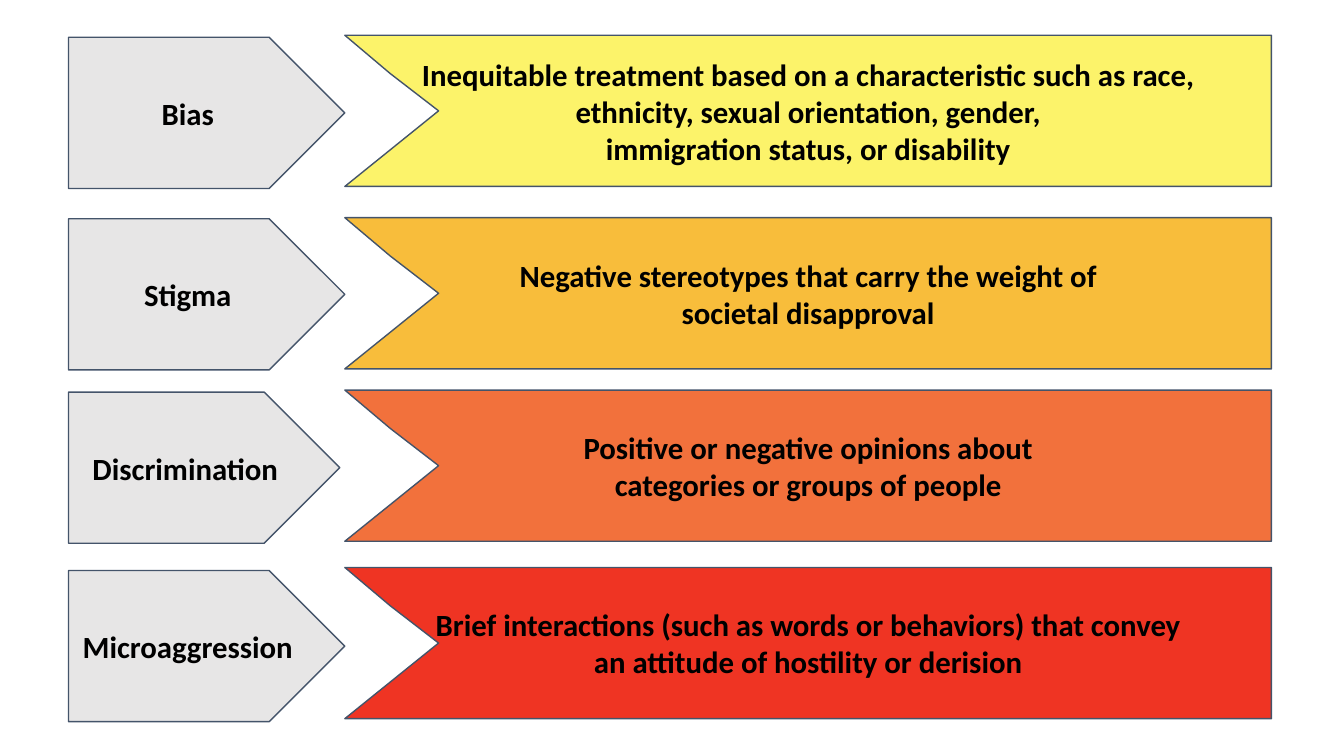
from pptx import Presentation
from pptx.dml.color import RGBColor
from pptx.enum.shapes import MSO_SHAPE
from pptx.enum.text import MSO_ANCHOR, PP_ALIGN
from pptx.util import Inches, Pt

COLORS = {
    "text": "000000",
    "outline": "44546A",
    "label": "E7E6E6",
    "yellow": "FCF36A",
    "amber": "F8BD3B",
    "orange": "F2713C",
    "red": "EF3423",
}
ROW_LEFT, ROW_HEIGHT = 0.68, 1.5
BANNER_OFFSET, BANNER_WIDTH = 2.74, 9.19
BANNER_OUTLINE = [(BANNER_WIDTH, 0), (BANNER_WIDTH, ROW_HEIGHT),
                  (0, ROW_HEIGHT), (0.93, 0.75), (0.45, 0.38)]
ROWS = [
    ("Bias", 0.37, 2.74, 0.35, "yellow",
     ["Inequitable treatment based on a characteristic such as race,",
      "ethnicity, sexual orientation, gender,",
      "immigration status, or disability"]),
    ("Stigma", 2.17, 2.74, 2.16, "amber",
     ["Negative stereotypes that carry the weight of",
      "societal disapproval"]),
    ("Discrimination", 3.89, 2.69, 3.87, "orange",
     ["Positive or negative opinions about",
      "categories or groups of people"]),
    ("Microaggression", 5.66, 2.74, 5.63, "red",
     ["Brief interactions (such as words or behaviors) that convey",
      "an attitude of hostility or derision"]),
]


def rgb(name):
    return RGBColor.from_string(COLORS[name])


def style_shape(sp, color, lines):
    sp.shadow.inherit = False
    sp.fill.solid()
    sp.fill.fore_color.rgb = rgb(color)
    sp.line.color.rgb = rgb("outline")
    sp.line.width = Pt(1)
    tf = sp.text_frame
    tf.word_wrap = True
    tf.vertical_anchor = MSO_ANCHOR.MIDDLE
    tf.text = "\n".join(lines)
    for p in tf.paragraphs:
        p.alignment = PP_ALIGN.CENTER
        p.font.name = "Calibri"
        p.font.size = Pt(22)
        p.font.bold = True
        p.font.color.rgb = rgb("text")


def add_label(s, left, top, width, term):
    sp = s.shapes.add_shape(MSO_SHAPE.PENTAGON, Inches(left), Inches(top),
                            Inches(width), Inches(ROW_HEIGHT))
    style_shape(sp, "label", [term])


def add_banner(s, left, top, color, lines):
    builder = s.shapes.build_freeform(Inches(left), Inches(top))
    builder.add_line_segments([(Inches(left + x), Inches(top + y))
                               for x, y in BANNER_OUTLINE])
    style_shape(builder.convert_to_shape(), color, lines)


def main():
    prs = Presentation()
    prs.slide_width = Inches(13.33)
    prs.slide_height = Inches(7.5)
    s = prs.slides.add_slide(prs.slide_layouts[6])
    for term, label_top, label_width, banner_top, color, lines in ROWS:
        add_label(s, ROW_LEFT, label_top, label_width, term)
        add_banner(s, ROW_LEFT + BANNER_OFFSET, banner_top, color, lines)
    prs.save("out.pptx")


if __name__ == "__main__":
    main()
